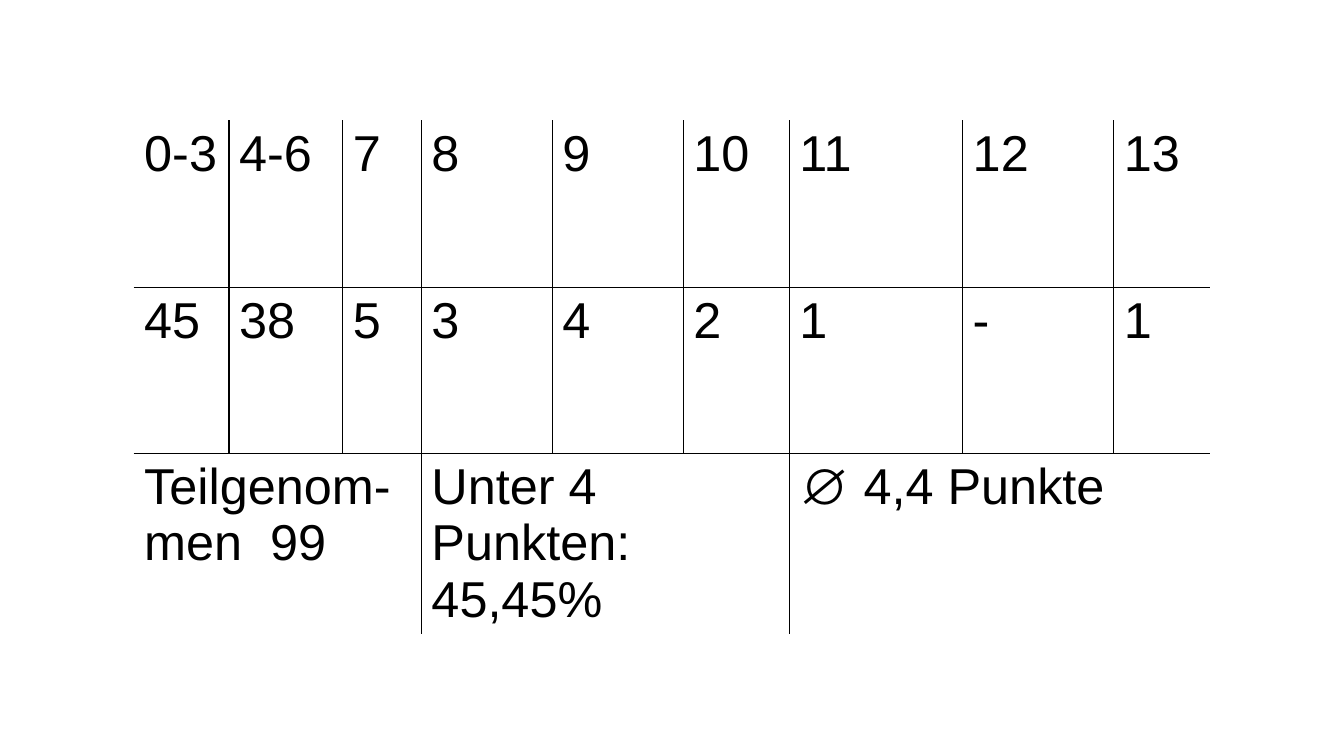
import pptx
import pptx.dml.color
import pptx.oxml
import pptx.oxml.ns
import pptx.util

BLACK = "000000"
WHITE = "FFFFFF"
COLUMN_WIDTHS = [2.39, 2.87, 1.98, 3.3, 3.3, 2.67, 4.37, 3.81, 2.41]
ROW_HEIGHTS = [4.19, 4.19, 4.55]
POINTS = ["0-3", "4-6", "7", "8", "9", "10", "11", "12", "13"]
COUNTS = ["45", "38", "5", "3", "4", "2", "1", "-", "1"]
SUMMARY = ["Teilgenom-men  99", "Unter 4 Punkten:\n45,45%", "∅ 4,4 Punkte"]
SUMMARY_SPAN = 3


def color(value):
    return pptx.dml.color.RGBColor.from_string(value)


def write_text(frame, text, font="Arial", size=36, ink=BLACK):
    frame.text = text
    for paragraph in frame.paragraphs:
        for run in paragraph.runs:
            run.font.name = font
            run.font.size = pptx.util.Pt(size)
            run.font.color.rgb = color(ink)


class SlideBuilder:
    def __init__(self, presentation, border_width=1):
        self.slide = presentation.slides.add_slide(presentation.slide_layouts[6])
        self.border_width = pptx.util.Pt(border_width)

    def table(self, left, top, widths, heights):
        shape = self.slide.shapes.add_table(
            len(heights), len(widths),
            pptx.util.Cm(left), pptx.util.Cm(top),
            pptx.util.Cm(sum(widths)), pptx.util.Cm(sum(heights)))
        table = shape.table
        table.first_row = False
        table.horz_banding = False
        for column, width in zip(table.columns, widths):
            column.width = pptx.util.Cm(width)
        for row, height in zip(table.rows, heights):
            row.height = pptx.util.Cm(height)
        return table

    def cell(self, cell, borders, text=""):
        write_text(cell.text_frame, text)
        cell.fill.solid()
        cell.fill.fore_color.rgb = color(WHITE)
        properties = cell._tc.get_or_add_tcPr()
        for position, (side, ink) in enumerate(borders.items()):
            properties.insert(position, pptx.oxml.parse_xml(
                f'<a:ln{side} {pptx.oxml.ns.nsdecls("a")} w="{self.border_width}">'
                f'<a:solidFill><a:srgbClr val="{ink}"/></a:solidFill>'
                f'</a:ln{side}>'))


def edge_borders(row, first, last):
    return {
        "L": WHITE if first == 0 else BLACK,
        "R": WHITE if last == len(COLUMN_WIDTHS) - 1 else BLACK,
        "T": WHITE if row == 0 else BLACK,
        "B": WHITE if row == len(ROW_HEIGHTS) - 1 else BLACK,
    }


def main():
    presentation = pptx.Presentation()
    presentation.slide_width = pptx.util.Cm(33.87)
    presentation.slide_height = pptx.util.Cm(19.05)
    builder = SlideBuilder(presentation)
    results = builder.table(3.38, 3.05, COLUMN_WIDTHS, ROW_HEIGHTS)

    for row, texts in enumerate([POINTS, COUNTS]):
        for column, text in enumerate(texts):
            builder.cell(results.cell(row, column), edge_borders(row, column, column), text)

    summary_row = len(ROW_HEIGHTS) - 1
    for group, text in enumerate(SUMMARY):
        first = group * SUMMARY_SPAN
        last = first + SUMMARY_SPAN - 1
        results.cell(summary_row, first).merge(results.cell(summary_row, last))
        borders = edge_borders(summary_row, first, last)
        for column in range(first, last + 1):
            builder.cell(results.cell(summary_row, column), borders,
                         text if column == first else "")

    presentation.save("out.pptx")


if __name__ == "__main__":
    main()
